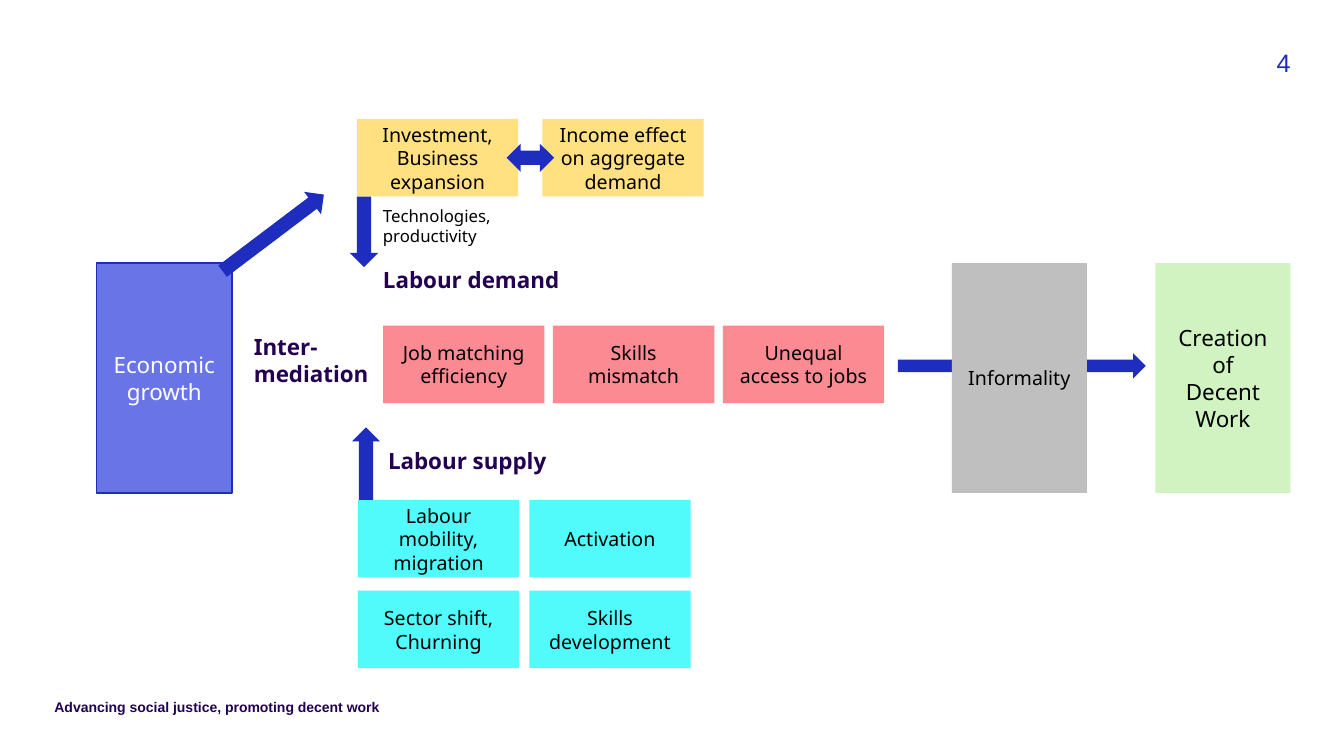
from dataclasses import dataclass

import pptx
import pptx.dml.color
import pptx.enum.shapes
import pptx.enum.text
import pptx.util

RGBColor = pptx.dml.color.RGBColor
MSO_SHAPE = pptx.enum.shapes.MSO_SHAPE
MSO_ANCHOR = pptx.enum.text.MSO_ANCHOR
PP_ALIGN = pptx.enum.text.PP_ALIGN

BLACK = RGBColor(0x00, 0x00, 0x00)
WHITE = RGBColor(0xFF, 0xFF, 0xFF)
NAVY = RGBColor(0x23, 0x00, 0x50)
BLUE = RGBColor(0x1E, 0x2D, 0xBE)
PERIWINKLE = RGBColor(0x69, 0x75, 0xE7)
YELLOW = RGBColor(0xFF, 0xE1, 0x81)
CYAN = RGBColor(0x52, 0xFB, 0xFB)
PINK = RGBColor(0xFC, 0x8A, 0x93)
GREEN = RGBColor(0xD1, 0xF3, 0xC1)
GREY = RGBColor(0xBF, 0xBF, 0xBF)

CELL = 0.1
CARD_W, CARD_H = 16, 7.7
PILLAR_W, PILLAR_H, PILLAR_ROW = 13.4, 22.8, 26.1

BODY = {"name": "Noto Sans", "size": pptx.util.Pt(14), "bold": False}
PILLAR = BODY | {"size": pptx.util.Pt(16)}
HEADING = PILLAR | {"bold": True}
NOTE = BODY | {"size": pptx.util.Pt(12)}
FOOTER = {"name": "Arial", "size": pptx.util.Pt(10), "bold": True}
NUMBER = {"name": "Arial", "size": pptx.util.Pt(18), "bold": False}


@dataclass
class Place:
    col: float
    row: float
    cols: float
    rows: float

    def emu(self) -> list:
        return [pptx.util.Inches(n * CELL) for n in (self.col, self.row, self.cols, self.rows)]


@dataclass
class Box:
    place: Place
    text: str
    fill: RGBColor
    font: dict
    color: RGBColor = BLACK
    line: RGBColor | None = None


@dataclass
class CardGrid:
    col: float
    row: float
    col_step: float
    row_step: float
    fill: RGBColor
    rows: list


@dataclass
class Label:
    place: Place
    text: str
    font: dict
    color: RGBColor
    align: PP_ALIGN = PP_ALIGN.LEFT
    inset: bool = True


@dataclass
class Arrow:
    place: Place
    kind: MSO_SHAPE
    rotation: float = 0


CARD_GRIDS = [
    CardGrid(35.4, 11.8, 18.4, 0, YELLOW,
             [["Investment,\nBusiness expansion", "Income effect on aggregate demand"]]),
    CardGrid(38, 32.3, 16.85, 0, PINK,
             [["Job matching efficiency", "Skills mismatch", "Unequal access to jobs"]]),
    CardGrid(35.5, 49.6, 17, 9, CYAN,
             [["Labour mobility, migration", "Activation"],
              ["Sector shift, Churning", "Skills development"]]),
]


def pillar_place(col: float) -> Place:
    return Place(col, PILLAR_ROW, PILLAR_W, PILLAR_H)


GROWTH = Box(pillar_place(9.6), "Economic growth", PERIWINKLE, PILLAR, WHITE, BLUE)
INFORMALITY = Box(pillar_place(94.4), "Informality", GREY, BODY)
DECENT_WORK = Box(pillar_place(114.6), "Creation of\nDecent Work", GREEN, PILLAR)

ARROWS = [
    Arrow(Place(50.25, 14.25, 4.7, 2.8), MSO_SHAPE.LEFT_RIGHT_ARROW),
    Arrow(Place(34.7, 19.5, 2.8, 7), MSO_SHAPE.DOWN_ARROW),
    Arrow(Place(25.7, 16.8, 2.8, 12.6), MSO_SHAPE.DOWN_ARROW, 232.9),
    Arrow(Place(34.9, 42.4, 2.8, 7.2), MSO_SHAPE.UP_ARROW),
    Arrow(Place(89.05, 35.05, 24.6, 2.5), MSO_SHAPE.RIGHT_ARROW),
]

LABELS = [
    Label(Place(37, 25.9, 22.1, 3.7), "Labour demand", HEADING, NAVY),
    Label(Place(37.5, 43.9, 18.1, 3.7), "Labour supply", HEADING, NAVY),
    Label(Place(24.2, 32.6, 13.6, 6.4), "Inter-\nmediation", HEADING, NAVY),
    Label(Place(37, 19.9, 13.4, 5), "Technologies, productivity", NOTE, BLACK),
    Label(Place(5.4, 69.3, 61.3, 2), "Advancing social justice, promoting decent work",
          FOOTER, NAVY, inset=False),
    Label(Place(122.1, 4.7, 5.9, 3.1), "4", NUMBER, BLUE, PP_ALIGN.RIGHT, False),
]


def write(tf: pptx.text.text.TextFrame, text: str, font: dict,
          color: RGBColor, align: PP_ALIGN) -> None:
    tf.word_wrap = True
    for i, line in enumerate(text.split("\n")):
        p = tf.add_paragraph() if i else tf.paragraphs[0]
        p.alignment = align
        r = p.add_run()
        r.text = line
        for key, value in font.items():
            setattr(r.font, key, value)
        r.font.color.rgb = color


def add_filled(s: pptx.slide.Slide, kind: MSO_SHAPE, place: Place,
               fill: RGBColor) -> pptx.shapes.autoshape.Shape:
    sp = s.shapes.add_shape(kind, *place.emu())
    sp.shadow.inherit = False
    sp.fill.solid()
    sp.fill.fore_color.rgb = fill
    sp.line.fill.background()
    return sp


def add_box(s: pptx.slide.Slide, box: Box) -> None:
    sp = add_filled(s, MSO_SHAPE.RECTANGLE, box.place, box.fill)
    if box.line is not None:
        sp.line.color.rgb = box.line
        sp.line.width = pptx.util.Pt(1)
    sp.text_frame.vertical_anchor = MSO_ANCHOR.MIDDLE
    write(sp.text_frame, box.text, box.font, box.color, PP_ALIGN.CENTER)


def add_cards(s: pptx.slide.Slide, grid: CardGrid) -> None:
    for j, texts in enumerate(grid.rows):
        for i, text in enumerate(texts):
            place = Place(grid.col + i * grid.col_step, grid.row + j * grid.row_step,
                          CARD_W, CARD_H)
            add_box(s, Box(place, text, grid.fill, BODY))


def add_arrow(s: pptx.slide.Slide, arrow: Arrow) -> None:
    sp = add_filled(s, arrow.kind, arrow.place, BLUE)
    sp.rotation = arrow.rotation


def add_label(s: pptx.slide.Slide, label: Label) -> None:
    tf = s.shapes.add_textbox(*label.place.emu()).text_frame
    if not label.inset:
        for side in ("left", "top", "right", "bottom"):
            setattr(tf, f"margin_{side}", 0)
    write(tf, label.text, label.font, label.color, label.align)


def main() -> None:
    prs = pptx.Presentation()
    prs.slide_width = pptx.util.Inches(13.33)
    prs.slide_height = pptx.util.Inches(7.5)
    s = prs.slides.add_slide(prs.slide_layouts[6])
    for grid in CARD_GRIDS:
        add_cards(s, grid)
    add_box(s, GROWTH)
    add_box(s, DECENT_WORK)
    for arrow in ARROWS:
        add_arrow(s, arrow)
    add_box(s, INFORMALITY)
    for label in LABELS:
        add_label(s, label)
    prs.save("out.pptx")


if __name__ == "__main__":
    main()
